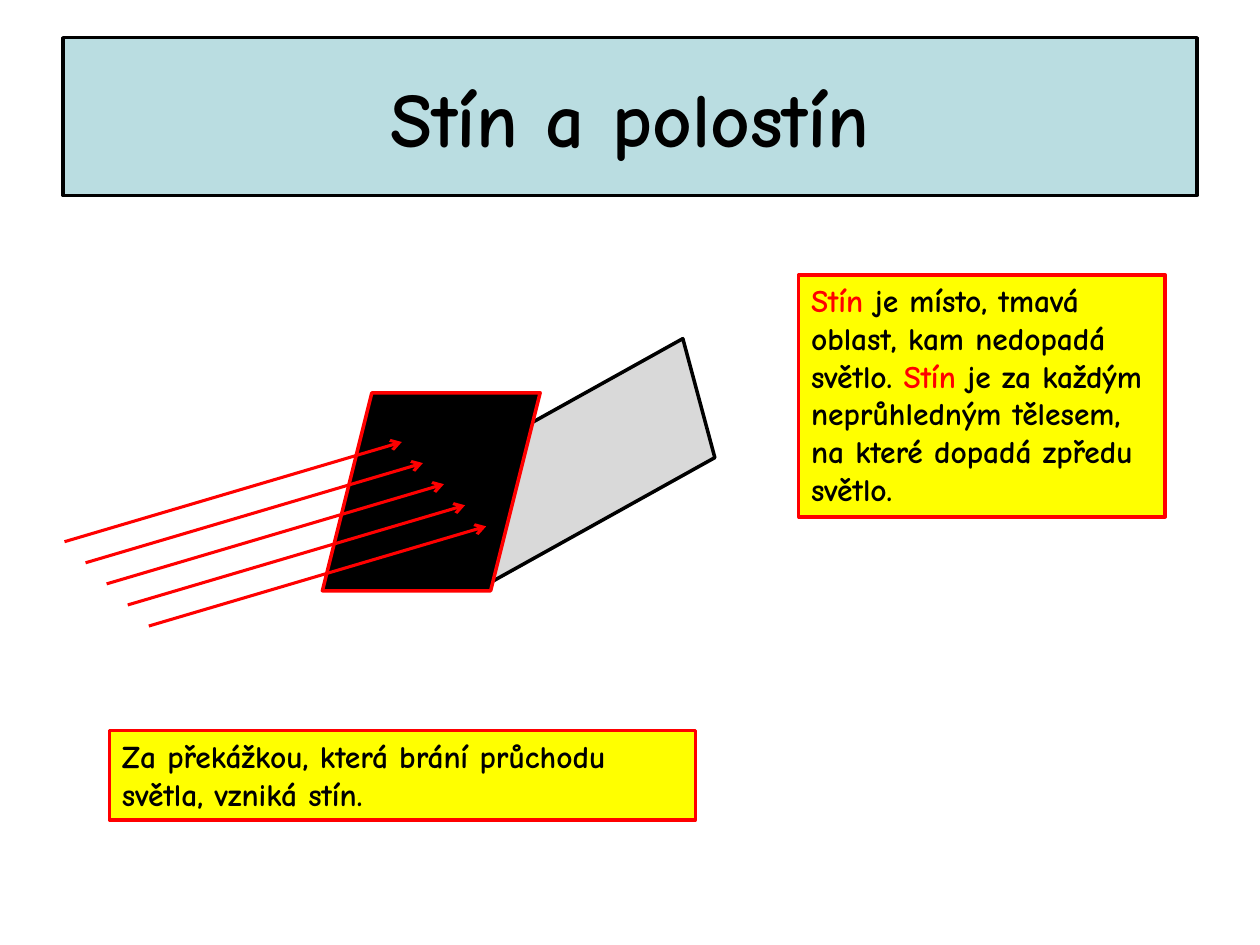
from lxml.etree import SubElement
from pptx import Presentation
from pptx.dml.color import RGBColor
from pptx.enum.shapes import MSO_CONNECTOR, MSO_SHAPE
from pptx.enum.text import MSO_ANCHOR, MSO_AUTO_SIZE, PP_ALIGN
from pptx.oxml.ns import qn
from pptx.util import Cm, Pt

FONT = "Comic Neue"
BLACK, RED, YELLOW, GREY, TEAL = "000000", "FF0000", "FFFF00", "D9D9D9", "BADDE1"

# Positions and sizes in centimetres: left, top, width, height
SHADOW = (8.74, 8.13, 5.99, 2.41)
SHADOW_ROTATION = 330.9
OBSTACLE = (6.5, 7.92, 4.39, 3.99)
TITLE = ((1.27, 0.76, 22.86, 3.18), [("Stín a polostín", BLACK)])
NOTES = [
    ((2.21, 14.73, 11.81, 1.8),
     [("Za překážkou, která brání průchodu světla, vzniká stín.", BLACK)]),
    ((16.1, 5.54, 7.39, 4.88),
     [("Stín", RED),
      (" je místo, tmavá oblast, kam nedopadá světlo. ", BLACK),
      ("Stín", RED),
      (" je za každým neprůhledným tělesem, na které dopadá zpředu světlo.", BLACK)]),
]
RAY_COUNT = 5
RAY_START = (1.3, 10.92)
RAY_REACH = (6.8, -2.01)
RAY_SPREAD = 1.7  # offset of the last ray from the first, right and down


def color(value):
    return RGBColor.from_string(value)


def set_all(target, formats):
    for name, value in formats.items():
        setattr(target, name, value)


def add_figure(page, kind, area, fill, line):
    figure = page.shapes.add_shape(kind, *map(Cm, area))
    figure.shadow.inherit = False
    figure.fill.solid()
    figure.fill.fore_color.rgb = color(fill)
    figure.line.color.rgb = color(line)
    figure.line.width = Pt(2)
    return figure


def write(box, spans, size, align, **frame_formats):
    frame = box.text_frame
    set_all(frame, {"word_wrap": True, **frame_formats})
    para = frame.paragraphs[0]
    para.alignment = align
    for text, ink in spans:
        span = para.add_run()
        span.text = text
        set_all(span.font, {"name": FONT, "size": Pt(size), "bold": True})
        span.font.color.rgb = color(ink)


def add_ray(page, x, y):
    end_x, end_y = x + RAY_REACH[0], y + RAY_REACH[1]
    ray = page.shapes.add_connector(
        MSO_CONNECTOR.STRAIGHT, Cm(x), Cm(y), Cm(end_x), Cm(end_y))
    ray.line.color.rgb = color(RED)
    ray.line.width = Pt(1.75)
    SubElement(ray.line._get_or_add_ln(), qn("a:tailEnd"), type="arrow")
    SubElement(ray._element.spPr, qn("a:effectLst"))


def main():
    deck = Presentation()
    set_all(deck, {"slide_width": Cm(25.4), "slide_height": Cm(19.05)})
    page = deck.slides.add_slide(deck.slide_layouts[6])

    shadow = add_figure(page, MSO_SHAPE.PARALLELOGRAM, SHADOW, GREY, BLACK)
    shadow.rotation = SHADOW_ROTATION

    area, spans = TITLE
    title = add_figure(page, MSO_SHAPE.RECTANGLE, area, TEAL, BLACK)
    write(title, spans, 44, PP_ALIGN.CENTER, vertical_anchor=MSO_ANCHOR.MIDDLE)

    add_figure(page, MSO_SHAPE.PARALLELOGRAM, OBSTACLE, BLACK, RED)
    for index in range(RAY_COUNT):
        offset = RAY_SPREAD * index / (RAY_COUNT - 1)
        add_ray(page, RAY_START[0] + offset, RAY_START[1] + offset)

    for area, spans in NOTES:
        note = add_figure(page, MSO_SHAPE.RECTANGLE, area, YELLOW, RED)
        write(note, spans, 18, PP_ALIGN.LEFT, vertical_anchor=MSO_ANCHOR.TOP,
              auto_size=MSO_AUTO_SIZE.SHAPE_TO_FIT_TEXT)

    deck.save("out.pptx")


if __name__ == "__main__":
    main()
